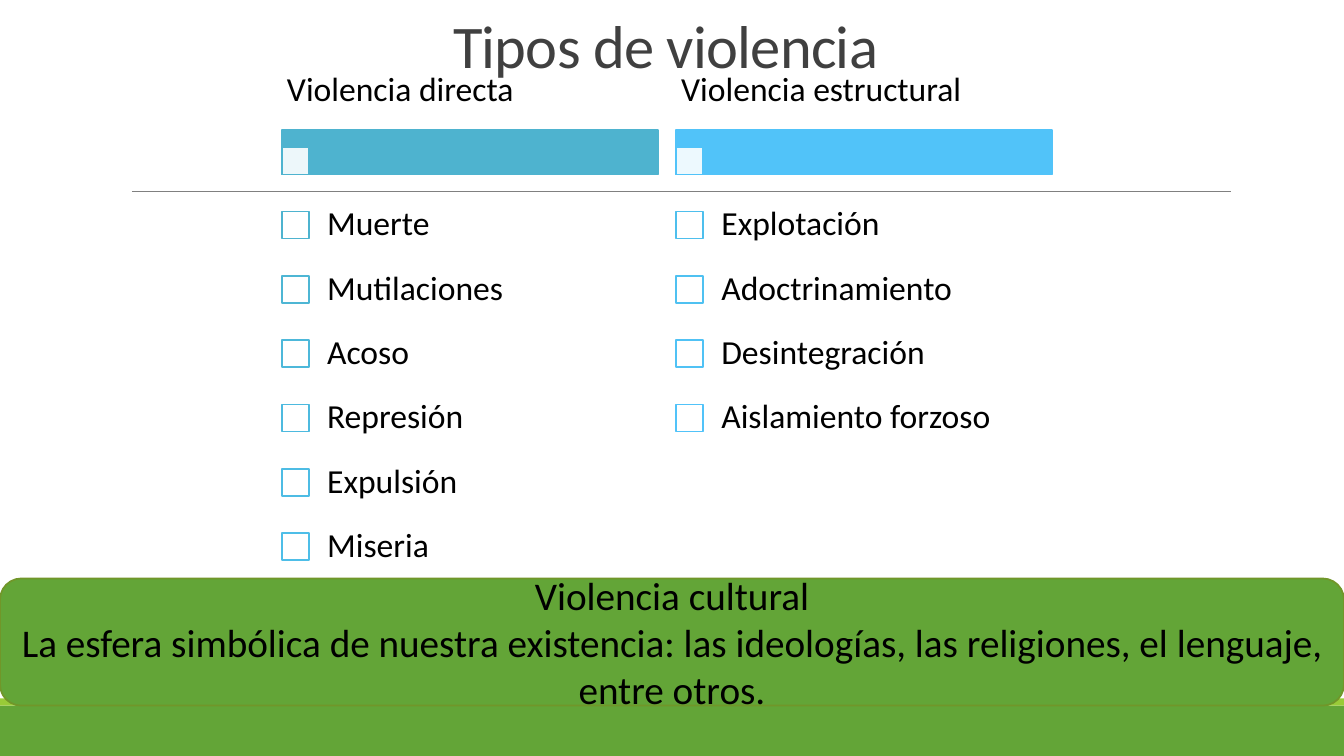
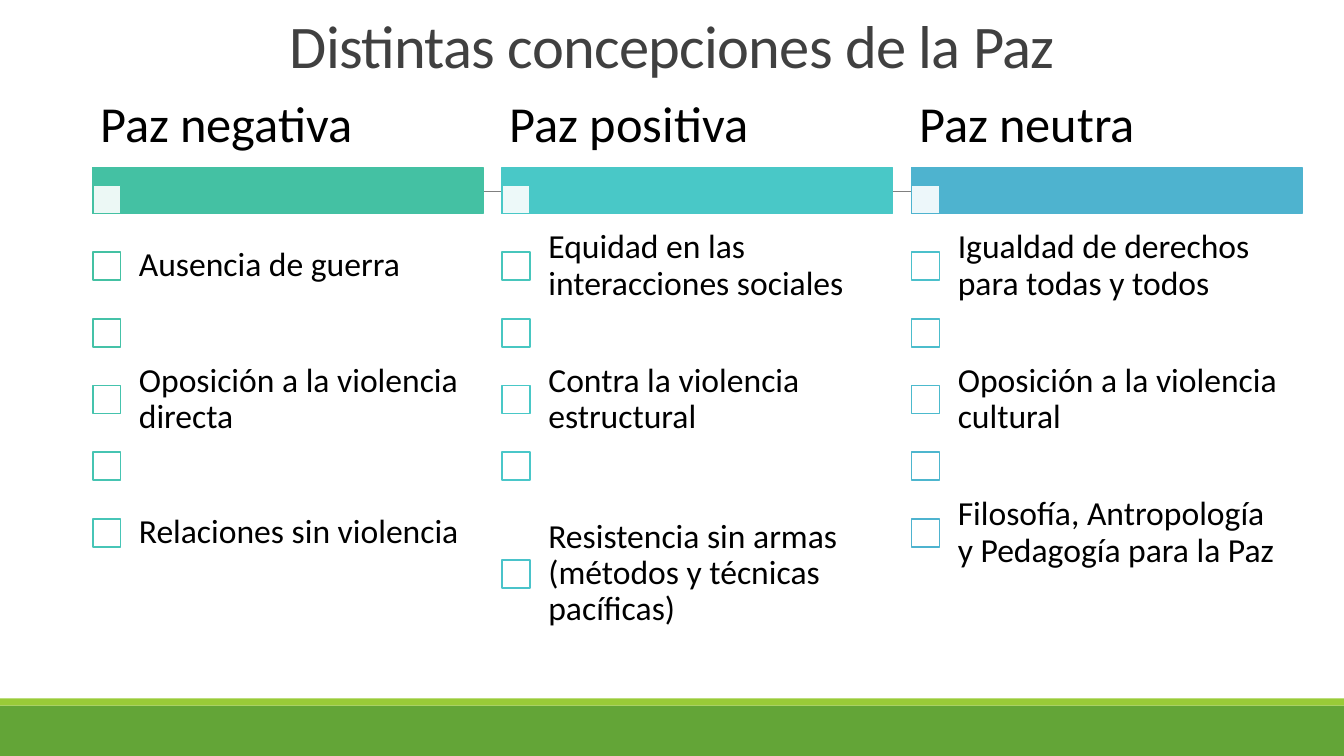
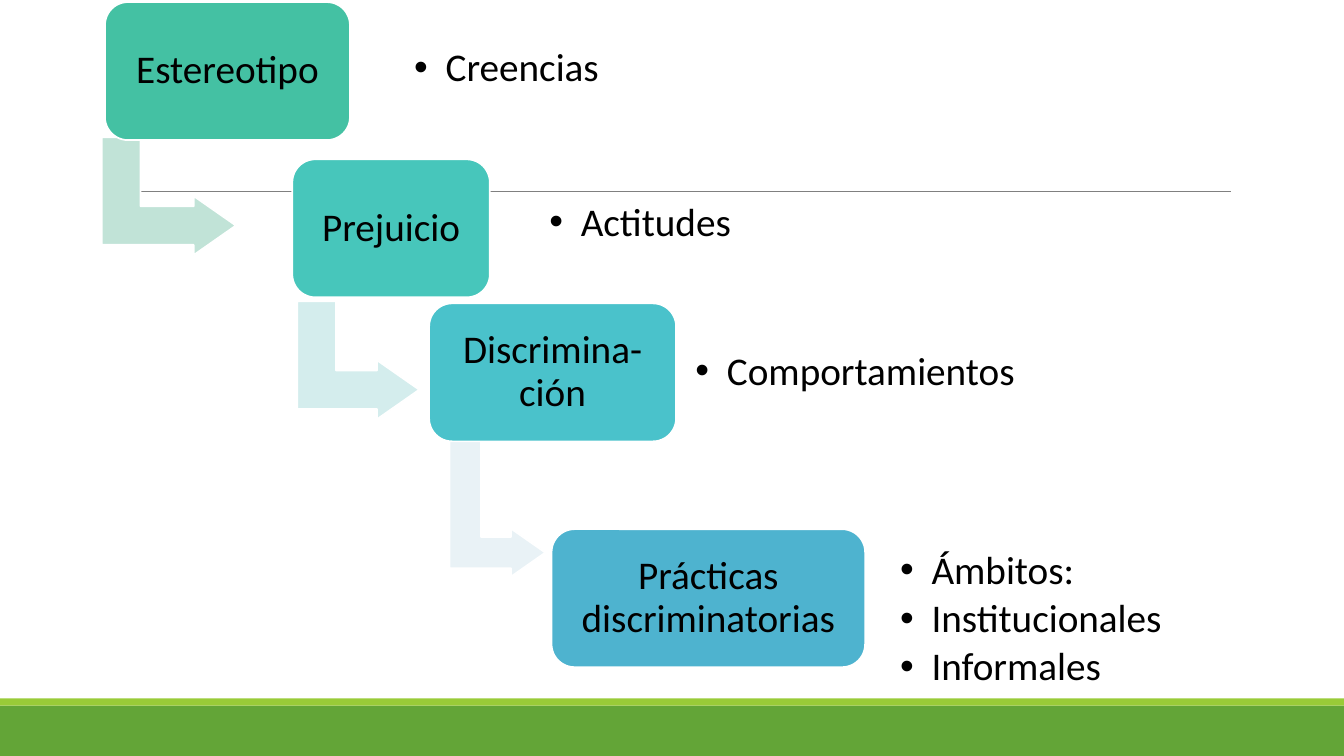
from colorsys import hls_to_rgb, rgb_to_hls
from dataclasses import dataclass
from typing import NamedTuple

from lxml import etree
from pptx import Presentation
from pptx.dml.color import RGBColor
from pptx.enum.shapes import MSO_CONNECTOR, MSO_SHAPE
from pptx.enum.text import MSO_ANCHOR, MSO_AUTO_SIZE, PP_ALIGN
from pptx.oxml.ns import qn
from pptx.util import Pt

RECTANGLE = MSO_SHAPE.RECTANGLE
ROUNDED = MSO_SHAPE.ROUNDED_RECTANGLE
BENT_ARROW = MSO_SHAPE.BENT_UP_ARROW
STRAIGHT = MSO_CONNECTOR.STRAIGHT
LEFT, CENTER = PP_ALIGN.LEFT, PP_ALIGN.CENTER
MIDDLE, BOTTOM = MSO_ANCHOR.MIDDLE, MSO_ANCHOR.BOTTOM
NO_FIT = MSO_AUTO_SIZE.NONE
TITLE_ONLY, BLANK = 5, 6


@dataclass(frozen=True)
class Theme:
    font: str = "Calibri"
    text: str = "000000"
    title: str = "404040"
    white: str = "FFFFFF"
    rule: str = "808080"
    green: str = "63A537"
    lime: str = "99CB38"
    olive: str = "719629"
    jade: str = "44C1A3"
    blue: str = "4EB3CF"
    sky: str = "51C3F9"
    title_size: float = 43.2
    heading_size: float = 36
    label_size: float = 28
    item_size: float = 24
    outline: float = 1.25
    hairline: float = 0.5


class Box(NamedTuple):
    left: float
    top: float
    width: float
    height: float

    def shifted_by(self, origin):
        return Box(origin.left + self.left, origin.top + self.top, self.width, self.height)

    def lengths(self):
        return [Pt(value) for value in self]


class Step(NamedTuple):
    label: str
    box: Box
    bullets: list
    bullets_box: Box
    arrow_box: Box = None
    arrow_color: str = None


THEME = Theme()
PAGE = Box(0, 0, 960, 540)
TITLE_BOX = Box(30, 11.5, 900, 49.7)


def apply(target, values):
    for name, value in values.items():
        setattr(target, name, value)


def color_ramp(start, end, count):
    first, last = (
        rgb_to_hls(*(channel / 255 for channel in RGBColor.from_string(color)))
        for color in (start, end)
    )
    ramp = []
    for index in range(count):
        share = index / (count - 1)
        mixed = [a + (b - a) * share for a, b in zip(first, last)]
        ramp.append(str(RGBColor(*(round(channel * 255) for channel in hls_to_rgb(*mixed)))))
    return ramp


def write_text(shape, lines, size, color=THEME.text, inset=(7.2, 3.6), align=LEFT,
               anchor=MIDDLE, spacing=0.9, after=0):
    frame = shape.text_frame
    horizontal, vertical = (Pt(value) for value in inset)
    apply(frame, {
        "word_wrap": True, "auto_size": NO_FIT, "vertical_anchor": anchor,
        "margin_left": horizontal, "margin_right": horizontal,
        "margin_top": vertical, "margin_bottom": vertical,
    })
    frame.text = "\n".join(lines)
    for paragraph in frame.paragraphs:
        apply(paragraph, {"alignment": align, "line_spacing": spacing, "space_after": Pt(after)})
        for run in paragraph.runs:
            apply(run.font, {"name": THEME.font, "size": Pt(size)})
            run.font.color.rgb = RGBColor.from_string(color)


def add_text(slide, box, lines, size, **style):
    shape = slide.shapes.add_textbox(*box.lengths())
    write_text(shape, lines, size, **style)
    return shape


def add_block(slide, kind, box, fill, line=None, opacity=None):
    shape = slide.shapes.add_shape(kind, *box.lengths())
    shape.shadow.inherit = False
    shape.fill.solid()
    shape.fill.fore_color.rgb = RGBColor.from_string(fill)
    if line:
        shape.line.width = Pt(THEME.outline)
        shape.line.color.rgb = RGBColor.from_string(line)
    else:
        shape.line.fill.background()
    if opacity:
        color = next(shape.element.spPr.iter(qn("a:srgbClr")))
        etree.SubElement(color, qn("a:alpha"), val=str(opacity * 1000))
    return shape


def add_bullets(shape, indent):
    for properties in shape.element.iter(qn("a:pPr")):
        properties.set("lvl", "1")
        properties.set("marL", str(Pt(indent)))
        properties.set("indent", str(-Pt(indent)))
        etree.SubElement(properties, qn("a:buFont"), typeface="Arial")
        etree.SubElement(properties, qn("a:buChar"), char="•")


def draw_backdrop(slide, box):
    add_block(slide, RECTANGLE, Box(0, 504, box.width, 36).shifted_by(box), THEME.green)
    add_block(slide, RECTANGLE, Box(0, 498.8, box.width, 5.2).shifted_by(box), THEME.lime)
    start, end = box.left + 94.3, box.left + box.width - 80.9
    level = box.top + 136.8
    rule = slide.shapes.add_connector(STRAIGHT, Pt(start), Pt(level), Pt(end), Pt(level))
    rule.line.width = Pt(THEME.hairline)
    rule.line.color.rgb = RGBColor.from_string(THEME.rule)
    etree.SubElement(rule.element.spPr, qn("a:effectLst"))


def draw_title(slide, box, text):
    title = slide.shapes.title
    apply(title, dict(zip(("left", "top", "width", "height"), box.lengths())))
    write_text(title, [text], THEME.title_size, color=THEME.title, align=CENTER,
               anchor=BOTTOM, spacing=0.85)
    for properties in title.element.iter(qn("a:rPr")):
        properties.set("spc", "-50")


def add_slide(presentation, title=None):
    layout = presentation.slide_layouts[TITLE_ONLY if title else BLANK]
    slide = presentation.slides.add_slide(layout)
    draw_backdrop(slide, PAGE)
    if title:
        draw_title(slide, TITLE_BOX, title)
    return slide


def draw_checklist(slide, box, heading, heading_size, items, bar_color, item_colors, tall_rows):
    unit = box.width
    heading_height, bar_height, marker = 0.212 * unit, 0.118 * unit, 0.0715 * unit
    row_height, text_left = 0.171 * unit, 0.07 * unit
    bar = Box(0, heading_height, unit, bar_height).shifted_by(box)
    add_block(slide, RECTANGLE, bar, bar_color, bar_color)
    corner = Box(0, bar_height - marker, marker, marker).shifted_by(bar)
    add_block(slide, RECTANGLE, corner, THEME.white, bar_color, opacity=90)
    add_text(slide, Box(box.left, box.top, unit, heading_height), [heading], heading_size,
             inset=(heading_size * 0.15, heading_size * 0.1))
    top = 0.379 * unit
    for item, color in zip(items, item_colors):
        height = tall_rows.get(item, row_height)
        check = Box(0, top + (height - marker) / 2, marker, marker).shifted_by(box)
        add_block(slide, RECTANGLE, check, THEME.white, color)
        if item:
            row = Box(text_left, top, unit - text_left, height).shifted_by(box)
            add_text(slide, row, [item], THEME.item_size, inset=(13.5, 13.5))
        top += height


def draw_checklists(slide, box, gap, columns, heading_size, first_color, last_color, tall_rows=None):
    width = (box.width - gap * (len(columns) - 1)) / len(columns)
    bar_colors = color_ramp(first_color, last_color, len(columns))
    colors = iter(color_ramp(first_color, last_color, sum(map(len, columns.values()))))
    for index, (heading, items) in enumerate(columns.items()):
        column = Box(index * (width + gap), 0, width, box.height).shifted_by(box)
        item_colors = [next(colors) for _ in items]
        draw_checklist(slide, column, heading, heading_size, items, bar_colors[index],
                       item_colors, tall_rows or {})


def draw_banner(slide, box, lines):
    banner = add_block(slide, ROUNDED, box, THEME.green, THEME.olive)
    write_text(banner, lines, THEME.label_size, align=CENTER, spacing=1.0)


def draw_step(slide, step, color):
    inset = (8.6, 8.6)
    if step.arrow_box:
        arrow = add_block(slide, BENT_ARROW, step.arrow_box.shifted_by(step.box),
                          step.arrow_color, THEME.white)
        arrow.rotation = 90
        for index, value in enumerate((0.328, 0.25, 0.358)):
            arrow.adjustments[index] = value
    card = add_block(slide, ROUNDED, step.box, color, THEME.white)
    write_text(card, [step.label], THEME.label_size, inset=inset, align=CENTER)
    bullets = add_text(slide, step.bullets_box.shifted_by(step.box), step.bullets,
                       THEME.label_size, inset=inset, after=4.2)
    add_bullets(bullets, 22.5)


def build_violence_slide(presentation):
    slide = add_slide(presentation, "Tipos de violencia ")
    columns = {
        "Violencia directa": ["Muerte", "Mutilaciones", "Acoso", "Represión", "Expulsión",
                              "Miseria"],
        "Violencia estructural": ["Explotación", "Adoctrinamiento", "Desintegración",
                                  "Aislamiento forzoso"],
    }
    draw_checklists(slide, Box(201.4, 36, 550.2, 377), 13, columns, THEME.item_size,
                    THEME.blue, THEME.sky)
    draw_banner(slide, Box(0, 413.2, 960, 90.8), [
        "Violencia cultural",
        "La esfera simbólica de nuestra existencia: las ideologías, las religiones, "
        "el lenguaje, entre otros.",
    ])


def build_peace_slide(presentation):
    slide = add_slide(presentation, "Distintas concepciones de la Paz")
    resistance = "Resistencia sin armas (métodos y técnicas pacíficas)"
    columns = {
        "Paz negativa": ["Ausencia de guerra", "", "Oposición a la violencia directa", "",
                         "Relaciones sin violencia"],
        "Paz positiva": ["Equidad en las interacciones sociales", "",
                         "Contra la violencia estructural", "", resistance],
        "Paz neutra": ["Igualdad de derechos para todas y todos", "",
                       "Oposición a la violencia cultural", "",
                       "Filosofía, Antropología y Pedagogía para la Paz"],
    }
    draw_checklists(slide, Box(66.2, 60.5, 863.8, 403), 13.6, columns, THEME.heading_size,
                    THEME.jade, THEME.blue, {resistance: 105.8})


def build_steps_slide(presentation):
    slide = add_slide(presentation)
    steps = [
        Step("Estereotipo", Box(75, 1.5, 175, 98.6), ["Creencias"],
             Box(212.3, 7.9, 157, 80), Box(3.5, 90.7, 84.2, 95.8), "C1E3D7"),
        Step("Prejuicio", Box(208.8, 113.8, 141.1, 98.6), ["Actitudes"],
             Box(175, 5.7, 152, 80), Box(5, 100, 84.2, 87.1), "D4EDED"),
        Step("Discrimina-ción", Box(306.5, 216.7, 176.4, 98.6), ["Comportamientos"],
             Box(181.7, 9.4, 269.3, 80), Box(-4.8, 107.3, 107.3, 68.4), "E9F2F6"),
        Step("Prácticas discriminatorias", Box(394, 378, 224, 98.6),
             ["Ámbitos:", "Institucionales", "Informales"], Box(240.3, -30.2, 217.4, 190)),
    ]
    for step, color in zip(steps, color_ramp(THEME.jade, THEME.blue, len(steps))):
        draw_step(slide, step, color)


def main():
    presentation = Presentation()
    apply(presentation, {"slide_width": Pt(PAGE.width), "slide_height": Pt(PAGE.height)})
    for build in (build_violence_slide, build_peace_slide, build_steps_slide):
        build(presentation)
    presentation.save("out.pptx")


if __name__ == "__main__":
    main()
